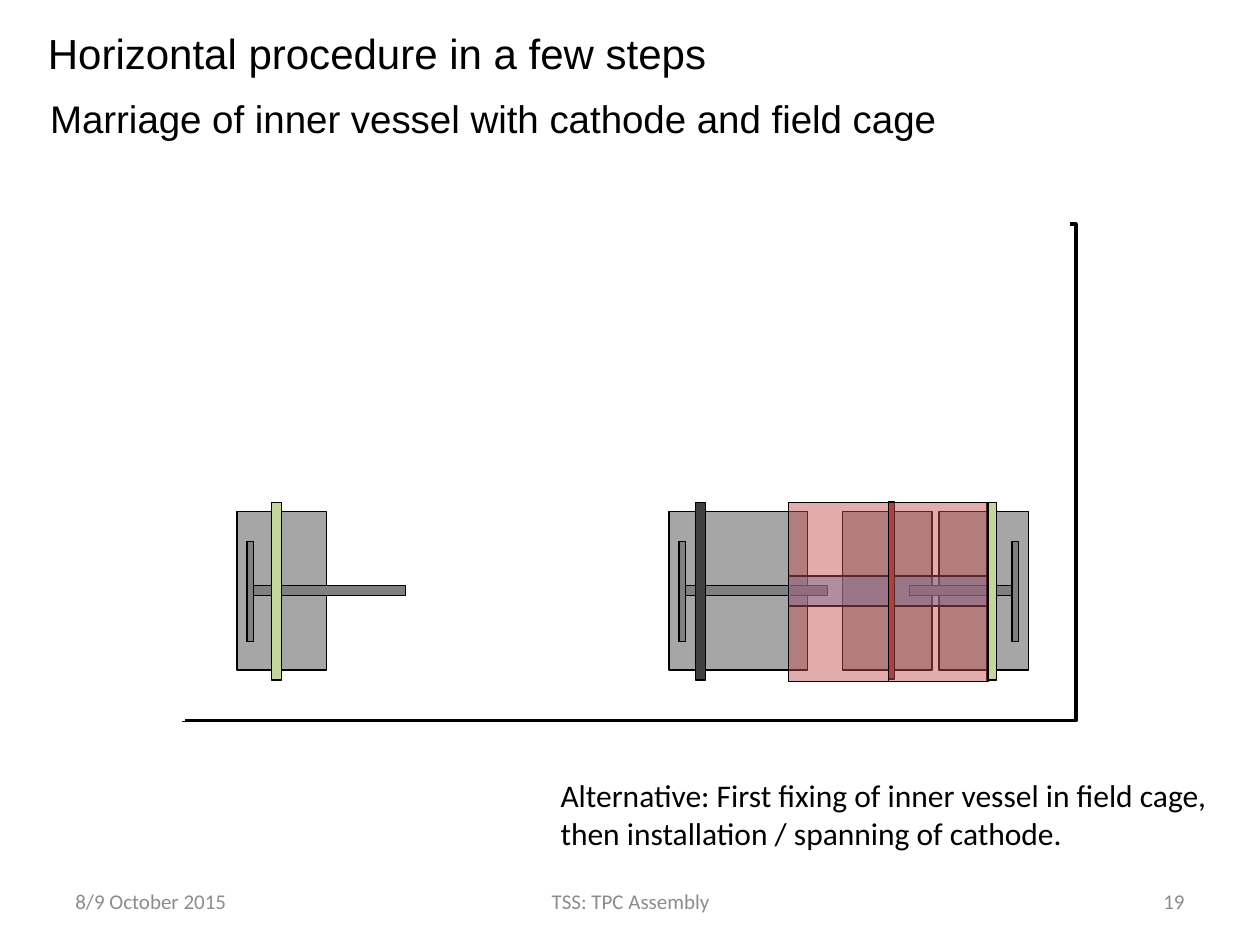
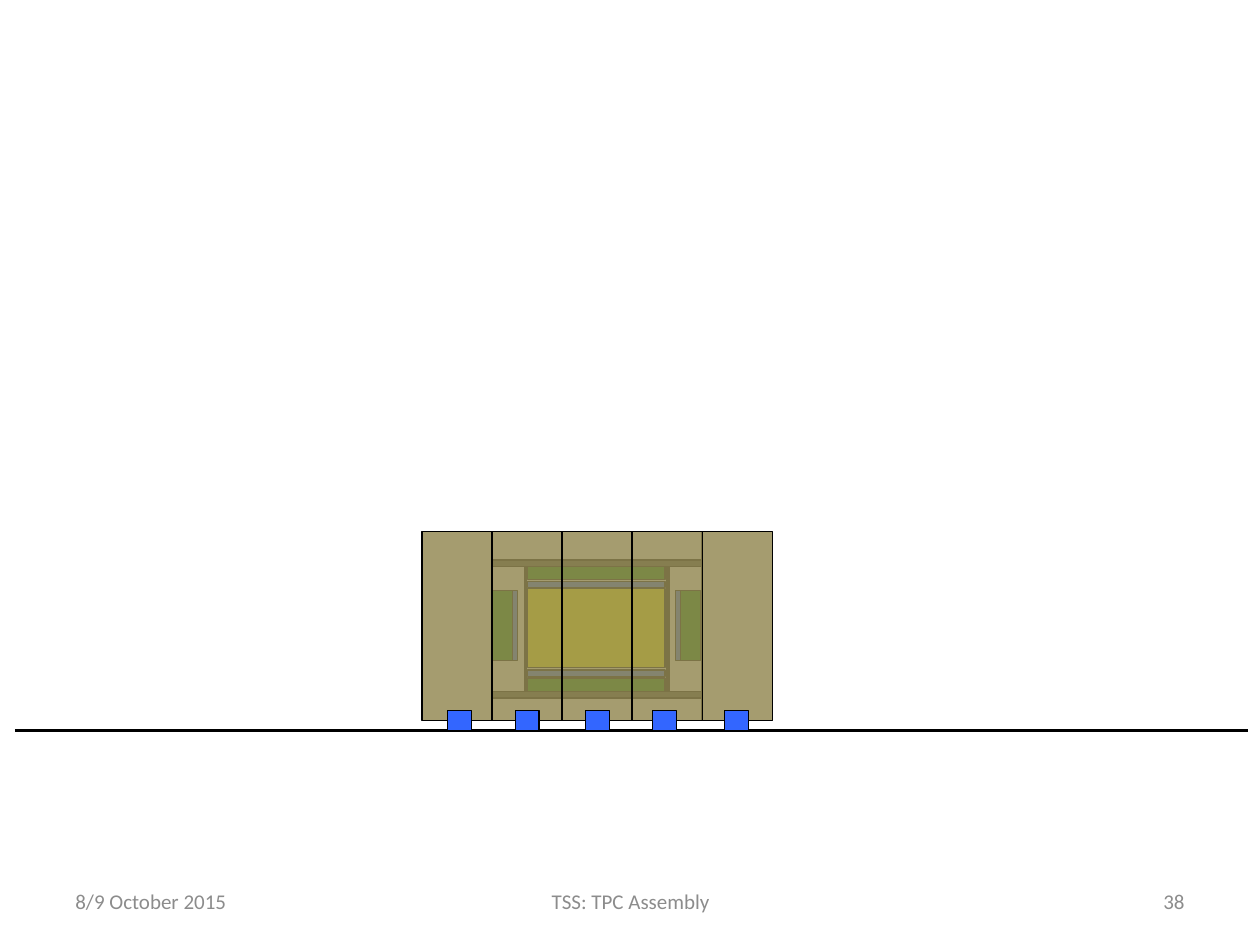
import dataclasses

import lxml.etree
import pptx
import pptx.dml.color
import pptx.enum.shapes
import pptx.enum.text
import pptx.oxml.ns
import pptx.util

Cm, Pt = pptx.util.Cm, pptx.util.Pt
Align = pptx.enum.text.PP_ALIGN
Anchor = pptx.enum.text.MSO_ANCHOR
qn = pptx.oxml.ns.qn


@dataclasses.dataclass(frozen=True)
class Theme:
    black: str = "000000"
    white: str = "FFFFFF"
    muted: str = "8C8C8C"
    panel: str = "A6A6A6"
    rod: str = "808080"
    dark: str = "404040"
    ring: str = "C3D69B"
    vessel: str = "558ED5"
    cathode: str = "953735"
    cage: str = "C0504D"
    yoke: str = "948A54"
    blue: str = "3366FF"
    green: str = "008000"
    yellow: str = "FFFF00"
    head: str = "Arial"
    body: str = "Calibri"
    title: float = 24
    sub: float = 22
    note: float = 18
    foot: float = 12
    thin: float = 0.75
    thick: float = 2
    mask: float = 3


def rgb(code):
    return pptx.dml.color.RGBColor.from_string(code)


class Deck:
    def __init__(self, theme):
        self.theme = theme
        self.prs = pptx.Presentation()
        self.prs.slide_width, self.prs.slide_height = Cm(25.4), Cm(19.05)

    def start(self, layout, number):
        """Add a slide with its footer."""
        self.slide = self.prs.slides.add_slide(self.prs.slide_layouts[layout])
        for text, x, w, align in (
            ("8/9 October 2015", 1.27, 5.92, Align.LEFT),
            ("TSS: TPC Assembly", 8.69, 8.05, Align.CENTER),
            (number, 18.21, 5.92, Align.RIGHT),
        ):
            box = self.text(text, x, 17.65, w, 1.02, self.theme.foot,
                            color=self.theme.muted, align=align)
            box.text_frame.vertical_anchor = Anchor.MIDDLE
            box.text_frame.word_wrap = True

    def label(self, box, text, size, font, color, align):
        """Set and format the text of a box."""
        frame = box.text_frame
        frame.text = text
        frame.word_wrap = False
        frame.vertical_anchor = Anchor.TOP
        for para in frame.paragraphs:
            para.alignment = align
            for run in para.runs:
                run.font.size, run.font.name = Pt(size), font
                run.font.color.rgb = rgb(color)

    def text(self, text, x, y, w, h, size, font=None, color=None,
             align=Align.LEFT):
        box = self.slide.shapes.add_textbox(Cm(x), Cm(y), Cm(w), Cm(h))
        self.label(box, text, size, font or self.theme.body,
                   color or self.theme.black, align)
        return box

    def title(self, text, x, y, w, h):
        box = self.slide.shapes.title
        box.left, box.top, box.width, box.height = Cm(x), Cm(y), Cm(w), Cm(h)
        self.label(box, text, self.theme.title, self.theme.head,
                   self.theme.black, Align.LEFT)
        box.text_frame.auto_size = pptx.enum.text.MSO_AUTO_SIZE.NONE

    def rect(self, x, y, w, h, fill=None, alpha=None, width=None):
        """Draw an outlined box; alpha is opacity in percent."""
        kind = pptx.enum.shapes.MSO_SHAPE.RECTANGLE
        box = self.slide.shapes.add_shape(kind, Cm(x), Cm(y), Cm(w), Cm(h))
        box.shadow.inherit = False
        if fill:
            box.fill.solid()
            box.fill.fore_color.rgb = rgb(fill)
        else:
            box.fill.background()
        if alpha:
            tone = next(box.element.iter(qn("a:srgbClr")))
            lxml.etree.SubElement(tone, qn("a:alpha"), val=str(alpha * 1000))
        box.line.color.rgb = rgb(self.theme.black)
        box.line.width = Pt(width or self.theme.thin)

    def line(self, x1, y1, x2, y2, color, width):
        kind = pptx.enum.shapes.MSO_CONNECTOR.STRAIGHT
        rule = self.slide.shapes.add_connector(
            kind, Cm(x1), Cm(y1), Cm(x2), Cm(y2))
        rule.line.color.rgb = rgb(color)
        rule.line.width = Pt(width)
        lxml.etree.SubElement(rule.element.spPr, qn("a:effectLst"))

    def cap(self, edge, way, panel, rod, ring, color):
        """Draw an end cap from its outer edge; way is 1 right, -1 left."""
        for gap, y, w, h, fill in (
            (0, 10.31, panel, 3.2, self.theme.panel),
            (0.2, 10.92, 0.13, 2.01, self.theme.rod),
            (0.33, 11.81, rod, 0.2, self.theme.rod),
            (ring, 10.13, 0.2, 3.58, color),
        ):
            x = edge + gap if way > 0 else edge - gap - w
            self.rect(x, y, w, h, fill)


def marry(deck):
    th = deck.theme
    deck.start(5, "19")
    deck.title("Horizontal procedure in a few steps", 0.71, 0.43, 13.92, 1.27)
    deck.text("Marriage of inner vessel with cathode and field cage",
              0.76, 1.8, 18.59, 1.19, th.sub, th.head)

    # Hall: only the floor and the right wall stay visible
    deck.rect(3.68, 4.52, 18.01, 10.01, width=th.thick)
    deck.line(2.97, 4.52, 21.56, 4.52, th.white, th.mask)
    deck.line(3.68, 3.94, 3.68, 14.53, th.white, th.mask)

    deck.rect(16.99, 10.31, 1.8, 3.2, th.panel)
    deck.cap(20.73, -1, 1.8, 2.06, 0.64, th.ring)
    deck.cap(4.78, 1, 1.8, 3.07, 0.69, th.ring)
    deck.cap(13.49, 1, 2.79, 2.87, 0.53, th.dark)

    deck.rect(15.9, 11.61, 3.99, 0.61, th.vessel, 52)
    deck.rect(17.91, 10.11, 0.13, 3.58, th.cathode)
    for x in (15.9, 17.91):
        deck.rect(x, 10.13, 2.01, 3.61, th.cage, 47)
    deck.text("Alternative: First fixing of inner vessel in field cage,\n"
              "then installation / spanning of cathode.",
              11.05, 15.52, 13.72, 1.8, th.note)


def close_up(deck):
    th = deck.theme
    mid_x, mid_y = 12.03, 12.68
    deck.start(6, "38")

    def yoke(*slots):
        for slot in slots:
            deck.rect(8.51 + 1.41 * slot, 10.72, 1.42, 3.81, th.yoke, 84)

    yoke(0, 4)
    for x, w, fill in ((10.31, 0.13, th.blue), (9.93, 0.41, th.green)):
        for left in (x, 2 * mid_x - x - w):
            deck.rect(left, 11.91, w, 1.4, fill)

    deck.line(0.3, 14.73, 25.15, 14.73, th.black, th.thick)
    for x in (10.59, 2 * mid_x - 10.59):
        deck.line(x, 11.4, x, 13.92, th.black, th.thick)

    for x, y, w, h, fill in (
        (10.64, 13.51, 2.77, 0.13, th.blue),
        (10.64, 13.67, 2.77, 0.28, th.green),
        (9.91, 13.94, 4.24, 0.13, th.dark),
    ):
        for top in (y, 2 * mid_y - y - h):
            deck.rect(x, top, w, h, fill)
    deck.rect(10.64, 11.86, 2.77, 1.6, th.yellow)

    yoke(1, 2, 3)
    for foot in (9.02, 10.39, 11.81, 13.16, 14.61):
        deck.rect(foot, 14.33, 0.48, 0.41, th.blue)


def main():
    deck = Deck(Theme())
    marry(deck)
    close_up(deck)
    deck.prs.save("out.pptx")


if __name__ == "__main__":
    main()
